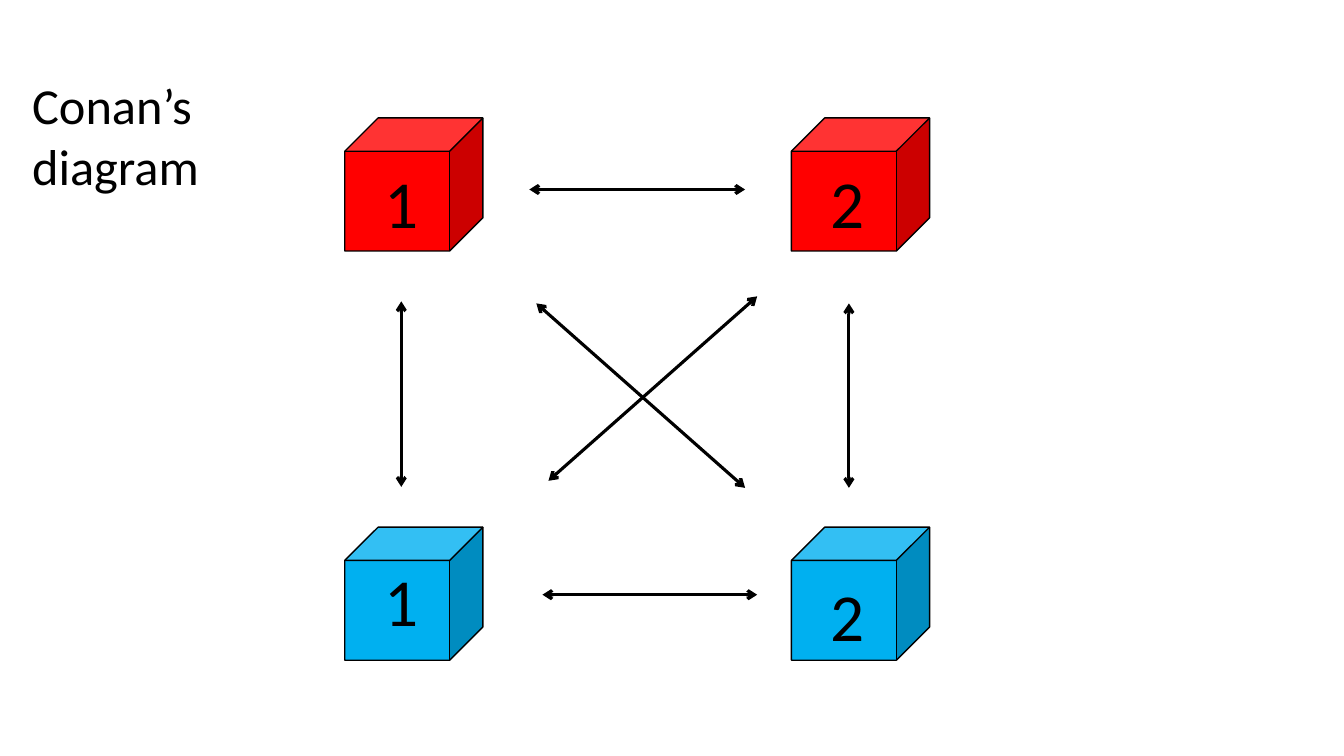
from dataclasses import dataclass

from lxml.etree import SubElement
from pptx import Presentation
from pptx.dml.color import RGBColor as Rgb
from pptx.enum.shapes import MSO_CONNECTOR as Link, MSO_SHAPE as Shape
from pptx.enum.text import MSO_AUTO_SIZE as Fit, PP_ALIGN as Align
from pptx.oxml.ns import qn
from pptx.util import Inches, Pt


@dataclass(frozen=True)
class Theme:
    """Colours, font and type sizes of the slide."""
    black: str = "000000"
    red: str = "FF0000"
    blue: str = "00B0F0"
    font: str = "Calibri"
    title: int = 36
    digit: int = 48
    edge: float = 1
    arrow: float = 2.25


THEME = Theme()
LEFT, RIGHT = 3.42, 7.85
TOP, BASE = 1.17, 5.23
CUBES = [
    ("1", LEFT, TOP, THEME.red, 0.38),
    ("2", RIGHT, TOP, THEME.red, 0.38),
    ("1", LEFT, BASE, THEME.blue, 0.27),
    ("2", RIGHT, BASE, THEME.blue, 0.42),
]
ARROWS = [
    (5.25, 1.88, 7.39, 1.88),
    (5.38, 5.9, 7.51, 5.9),
    (3.98, 4.83, 3.98, 2.99),
    (8.42, 4.84, 8.42, 3.01),
    (7.39, 4.84, 5.32, 3.01),
    (7.51, 2.94, 5.44, 4.77),
]


def add_text(slide, text, box, size, color=THEME.black, align=Align.LEFT):
    """Add a wrapped text box with one format."""
    frame = slide.shapes.add_textbox(*map(Inches, box)).text_frame
    frame.word_wrap = True
    frame.auto_size = Fit.SHAPE_TO_FIT_TEXT
    para = frame.paragraphs[0]
    para.alignment = align
    run = para.add_run()
    run.text = text
    run.font.name = THEME.font
    run.font.size = Pt(size)
    run.font.color.rgb = Rgb.from_string(color)


def set_line(line, width):
    """Give a line the dark colour and a width."""
    line.color.rgb = Rgb.from_string(THEME.black)
    line.width = Pt(width)


def add_cube(slide, left, top, color):
    """Add a filled cube with a thin outline."""
    cube = slide.shapes.add_shape(Shape.CUBE, *map(Inches, (left, top, 1.37, 1.32)))
    cube.shadow.inherit = False
    cube.fill.solid()
    cube.fill.fore_color.rgb = Rgb.from_string(color)
    set_line(cube.line, THEME.edge)


def add_arrow(slide, ends):
    """Add a straight line with an open arrowhead at each end."""
    arrow = slide.shapes.add_connector(Link.STRAIGHT, *map(Inches, ends))
    set_line(arrow.line, THEME.arrow)
    props = arrow.element.spPr
    for tag in ("a:headEnd", "a:tailEnd"):
        SubElement(props.find(qn("a:ln")), qn(tag), type="arrow")
    SubElement(props, qn("a:effectLst"))


def main():
    """Build the diagram slide and save it."""
    deck = Presentation()
    deck.slide_width, deck.slide_height = Inches(13.33), Inches(7.5)
    slide = deck.slides.add_slide(deck.slide_layouts[6])
    for digit, left, top, color, drop in CUBES:
        add_cube(slide, left, top, color)
        add_text(slide, digit, (left + 0.27, top + drop, 0.58, 0.91),
                 THEME.digit, align=Align.CENTER)
    for ends in ARROWS:
        add_arrow(slide, ends)
    add_text(slide, "Conan’s diagram", (0.22, 0.69, 2.67, 1.31), THEME.title)
    deck.save("out.pptx")


if __name__ == "__main__":
    main()
